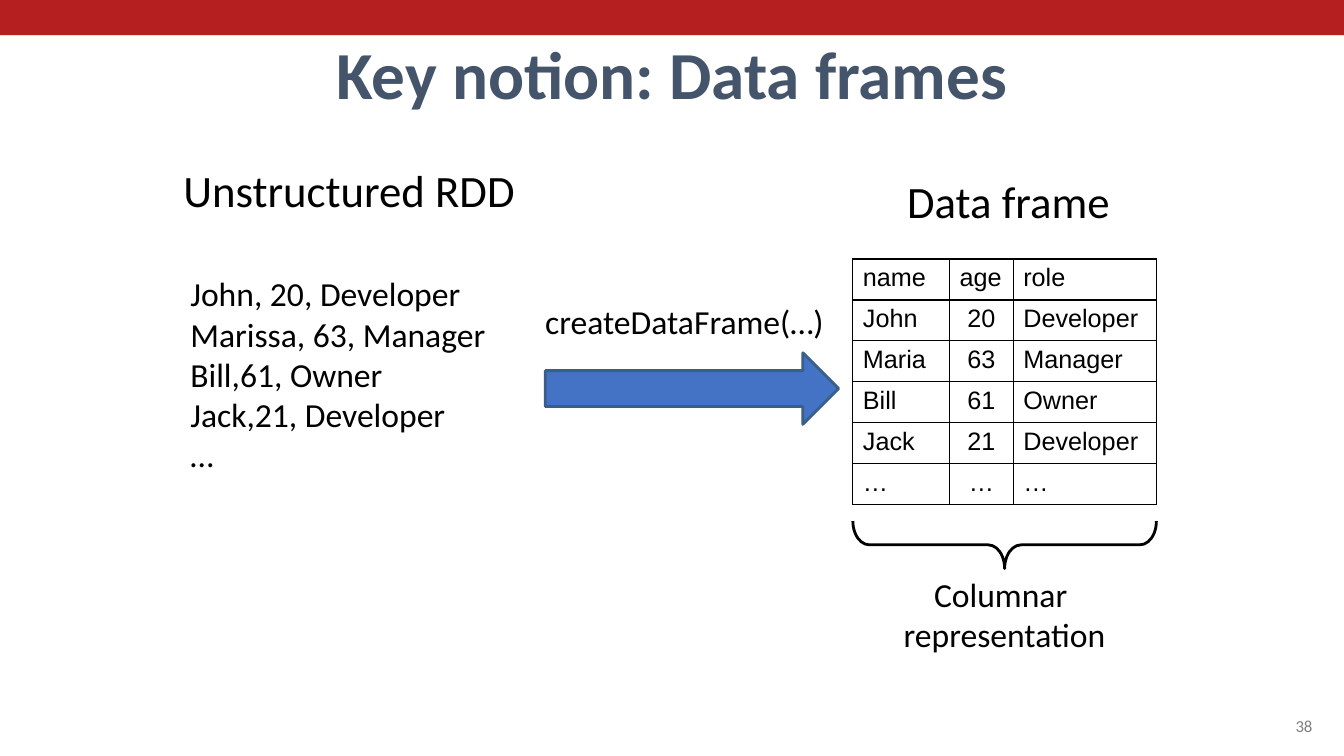
from lxml.etree import SubElement
from pptx import Presentation
from pptx.dml.color import RGBColor
from pptx.enum.shapes import MSO_SHAPE
from pptx.enum.text import MSO_ANCHOR, MSO_AUTO_SIZE, PP_ALIGN
from pptx.oxml.ns import qn
from pptx.util import Pt

RED = RGBColor(0xB5, 0x1F, 0x1F)
SLATE = RGBColor(0x44, 0x54, 0x6A)
GREY = RGBColor(0x7F, 0x7F, 0x7F)
BLACK = RGBColor(0, 0, 0)
BLUE = RGBColor(0x44, 0x72, 0xC4)
DARK_BLUE = RGBColor(0x39, 0x5E, 0x89)

HEADING = {"name": "Calibri", "size": Pt(32)}
BODY = {"name": "Calibri", "size": Pt(24)}
CELL = {"name": "Arial", "size": Pt(18)}
TITLE = {"name": "Calibri", "size": Pt(48), "bold": True}
NUMBER = {"name": "Calibri", "size": Pt(12)}

RECORDS = ["John, 20, Developer", "Marissa, 63, Manager", "Bill,61, Owner",
           "Jack,21, Developer", "…"]
ROWS = [
    ["name", "age", "role"],
    ["John", "20", "Developer"],
    ["Maria", "63", "Manager"],
    ["Bill", "61", "Owner"],
    ["Jack", "21", "Developer"],
    ["…", "…", "…"],
]
COLUMN_WIDTHS = [69, 45.6, 102.2]
ROW_HEIGHT = 29.28
TABLE_LEFT, TABLE_TOP = 609.2, 185


def points(*lengths):
    return [Pt(length) for length in lengths]


def fill_text(frame, lines, style, color=BLACK, align=PP_ALIGN.LEFT):
    frame.text = "\n".join(lines)
    for para in frame.paragraphs:
        para.alignment = align
        for name, value in style.items():
            setattr(para.font, name, value)
        para.font.color.rgb = color


def add_text(page, area, lines, style, color=BLACK, align=PP_ALIGN.LEFT,
             anchor=MSO_ANCHOR.TOP):
    frame = page.shapes.add_textbox(*points(*area)).text_frame
    frame.word_wrap = True
    frame.vertical_anchor = anchor
    fill_text(frame, lines, style, color, align)


def add_shape(page, kind, area, fill=None, line=None):
    shape = page.shapes.add_shape(kind, *points(*area))
    shape.shadow.inherit = False
    if fill is None:
        shape.fill.background()
    else:
        shape.fill.solid()
        shape.fill.fore_color.rgb = fill
    if line is None:
        shape.line.fill.background()
    else:
        shape.line.color.rgb = line
        shape.line.width = Pt(2)
    return shape


def set_title(page, text):
    title = page.shapes.title
    title.left, title.top, title.width, title.height = points(48, 21.6, 864, 62.64)
    frame = title.text_frame
    frame.auto_size = MSO_AUTO_SIZE.NONE
    frame.vertical_anchor = MSO_ANCHOR.BOTTOM
    fill_text(frame, [text], TITLE, SLATE, PP_ALIGN.CENTER)


def add_borders(cell):
    properties = cell._tc.get_or_add_tcPr()
    for position, side in enumerate(("lnL", "lnR", "lnT", "lnB")):
        border = properties.makeelement(qn(f"a:{side}"), {"w": str(Pt(1))})
        solid = SubElement(border, qn("a:solidFill"))
        SubElement(solid, qn("a:srgbClr"), val=str(BLACK))
        properties.insert(position, border)


def add_people_table(page):
    area = (TABLE_LEFT, TABLE_TOP, sum(COLUMN_WIDTHS), ROW_HEIGHT * len(ROWS))
    table = page.shapes.add_table(len(ROWS), len(COLUMN_WIDTHS), *points(*area)).table
    table.first_row = table.horz_banding = False
    for column, width in zip(table.columns, COLUMN_WIDTHS):
        column.width = Pt(width)
    for row_index, values in enumerate(ROWS):
        table.rows[row_index].height = Pt(ROW_HEIGHT)
        for column_index, value in enumerate(values):
            cell = table.cell(row_index, column_index)
            centred = row_index > 0 and column_index == 1
            align = PP_ALIGN.CENTER if centred else PP_ALIGN.LEFT
            fill_text(cell.text_frame, [value], CELL, align=align)
            cell.fill.background()
            add_borders(cell)


def add_brace_below(page, left, top, width, depth):
    """Turn a right brace so that it opens upwards across the given width."""
    area = (left + (width - depth) / 2, top + (depth - width) / 2, depth, width)
    brace = add_shape(page, MSO_SHAPE.RIGHT_BRACE, area, line=BLACK)
    brace.rotation = 90
    brace.adjustments[0] = 0.347


def main():
    deck = Presentation()
    deck.slide_width, deck.slide_height = points(960, 540)
    page = deck.slides.add_slide(deck.slide_layouts[5])

    add_shape(page, MSO_SHAPE.RECTANGLE, (0, 0, 960, 25.2), RED)
    set_title(page, "Key notion: Data frames")
    add_text(page, (688.3, 491.8, 256.3, 37.4), ["38"], NUMBER, GREY,
             PP_ALIGN.RIGHT, MSO_ANCHOR.BOTTOM)

    add_text(page, (94.3, 113, 310.3, 69.1), ["Unstructured RDD"], HEADING,
             align=PP_ALIGN.CENTER)
    add_text(page, (128.9, 191.5, 227.5, 152.6), RECORDS, BODY)

    add_text(page, (382.3, 211.7, 216.7, 36), ["createDataFrame(…)"], BODY)
    add_shape(page, MSO_SHAPE.RIGHT_ARROW, (389.5, 252, 209.5, 51.1), BLUE, DARK_BLUE)

    add_text(page, (589.7, 120.2, 261.4, 100.1), ["Data frame"], HEADING,
             align=PP_ALIGN.CENTER)
    add_people_table(page)
    add_brace_below(page, TABLE_LEFT, 372.3, sum(COLUMN_WIDTHS), 33.8)
    add_text(page, (637.2, 406.1, 160.6, 65.5), ["Columnar ", "representation"], BODY,
             align=PP_ALIGN.CENTER)

    deck.save("out.pptx")


if __name__ == "__main__":
    main()
